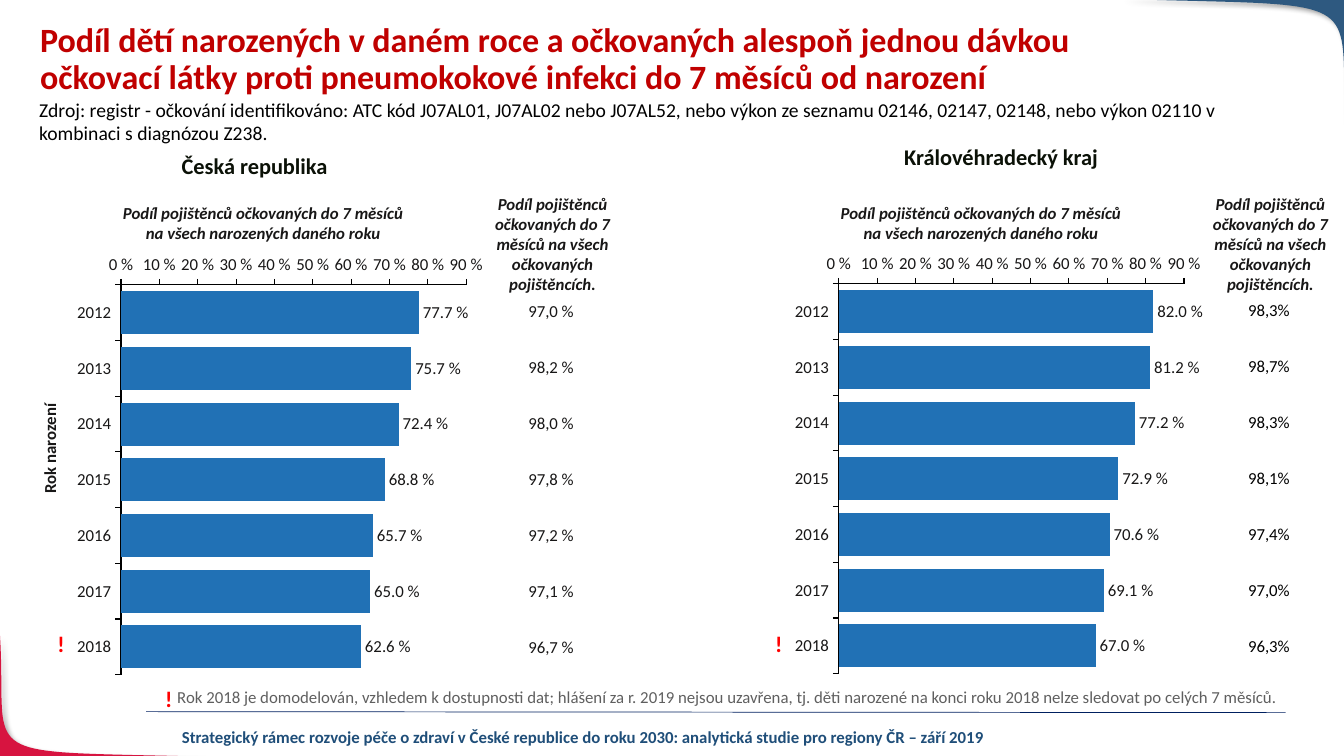
from dataclasses import dataclass

from lxml import etree
from pptx import Presentation
from pptx import oxml
from pptx import util as u
from pptx.chart.data import CategoryChartData
from pptx.dml.color import RGBColor
from pptx.enum import chart as ch, shapes, text
from pptx.oxml.ns import qn

Inches = u.Inches
A_NS = 'xmlns:a="http://schemas.openxmlformats.org/drawingml/2006/main"'
C_NS = 'xmlns:c="http://schemas.openxmlformats.org/drawingml/2006/chart"'
PLAIN_TABLE = "{2D5ABB26-0587-4C30-8999-92F81FD0307C}"


@dataclass(frozen=True)
class Theme:
    font: str = "Calibri"
    black: str = "000000"
    ink: str = "181717"
    heading: str = "0B1107"
    title: str = "C00000"
    alert: str = "FF0000"
    note: str = "5F5F5F"
    footer: str = "1F4E79"
    rule: str = "002060"
    bar: str = "2171B5"
    red_corner: str = "D71440"
    blue_corner: str = "2E5980"
    title_size: float = 24.3
    heading_size: float = 16
    source_size: float = 14
    body_size: float = 12


THEME = Theme()
YEARS = [str(year) for year in range(2012, 2019)]
CENTER = text.PP_ALIGN.CENTER


def rgb(code):
    return RGBColor.from_string(code)


def style(font, size=THEME.body_size, color=THEME.ink, bold=False, italic=False):
    font.name, font.size = THEME.font, u.Pt(size)
    font.bold, font.italic = bold, italic
    font.color.rgb = rgb(color)


def add_text(page, box, lines, align=None, spacing=None, **look):
    shape = page.shapes.add_textbox(*map(Inches, box))
    frame = shape.text_frame
    frame.word_wrap = True
    for index, line in enumerate(lines):
        para = frame.paragraphs[0] if index == 0 else frame.add_paragraph()
        para.alignment = align
        para.line_spacing = spacing
        span = para.add_run()
        span.text = line
        style(span.font, **look)
    return shape


def add_corner(page, start, handle_a, handle_b, end, corner, color):
    """Fill the area between a slide corner and a cubic curve."""
    steps = 40
    curve = []
    for step in range(1, steps + 1):
        t = step / steps
        weights = ((1 - t) ** 3, 3 * t * (1 - t) ** 2, 3 * t * t * (1 - t), t ** 3)
        points = (start, handle_a, handle_b, end)
        curve.append(tuple(sum(w * p[axis] for w, p in zip(weights, points))
                           for axis in (0, 1)))
    # Whole EMU coordinates keep the curve smooth
    outline = [(Inches(x), Inches(y)) for x, y in [start, *curve, corner]]
    builder = page.shapes.build_freeform(*outline[0])
    builder.add_line_segments(outline[1:], close=True)
    shape = builder.convert_to_shape()
    shape.fill.solid()
    shape.fill.fore_color.rgb = rgb(color)
    shape.line.fill.background()
    shape.shadow.inherit = False
    effects = shape._element.spPr.find(qn("a:effectLst"))
    effects.append(oxml.parse_xml(
        f'<a:outerShdw {A_NS} blurRad="{u.Pt(4)}" dist="{u.Pt(3)}" dir="2700000" '
        'algn="tl" rotWithShape="0"><a:srgbClr val="000000">'
        '<a:alpha val="40000"/></a:srgbClr></a:outerShdw>'))


def add_frame(page, width, height):
    # Corner ornaments
    add_corner(page, (2.13, height + 0.01), (-0.34, 7.44), (0.08, 7.59), (0, 6.3),
               (-0.01, height + 0.01), THEME.red_corner)
    add_corner(page, (11.11, -0.01), (13.7, 0.07), (13.26, -0.1), (width + 0.02, 1.42),
               (width + 0.02, -0.01), THEME.blue_corner)
    # Footer rule and text
    rule = page.shapes.add_connector(shapes.MSO_CONNECTOR.STRAIGHT, Inches(1.45),
                                     Inches(7.06), Inches(12.75), Inches(7.07))
    rule.line.color.rgb = rgb(THEME.rule)
    rule.line.width = u.Pt(0.5)
    etree.SubElement(rule._element.spPr, qn("a:effectLst"))
    add_text(page, (1.57, 7.16, 8.43, 0.3),
             ["Strategický rámec rozvoje péče o zdraví v České republice do roku 2030: "
              "analytická studie pro regiony ČR – září 2019"],
             CENTER, color=THEME.footer, bold=True)


def add_header(page):
    add_text(page, (0.29, 0.92, 12.14, 0.57),
             ["Zdroj: registr - očkování identifikováno: ATC kód J07AL01, J07AL02 nebo "
              "J07AL52, nebo výkon ze seznamu 02146, 02147, 02148, nebo výkon 02110 v "
              "kombinaci s diagnózou Z238."],
             size=THEME.source_size, color=THEME.black)
    add_text(page, (0.3, 0.18, 11.13, 0.69),
             ["Podíl dětí narozených v daném roce a očkovaných alespoň jednou dávkou "
              "očkovací látky proti pneumokokové infekci do 7 měsíců od narození"],
             spacing=0.9, size=THEME.title_size, color=THEME.title, bold=True)


def add_mark(page, left, top):
    add_text(page, (left, top, 0.4, 0.37), ["!"], size=THEME.heading_size,
             color=THEME.alert, bold=True)


def add_bars(page, box, percents):
    data = CategoryChartData()
    data.categories = YEARS
    data.add_series("Series 1", [round(value / 100, 3) for value in percents])
    chart = page.shapes.add_chart(ch.XL_CHART_TYPE.BAR_CLUSTERED,
                                  *map(Inches, box), data).chart
    style(chart.font)
    chart.has_legend = chart.has_title = False
    # Axes
    for axis in (chart.category_axis, chart.value_axis):
        axis.has_major_gridlines = False
        axis.major_tick_mark = ch.XL_TICK_MARK.OUTSIDE
        axis.minor_tick_mark = ch.XL_TICK_MARK.NONE
        axis.format.line.color.rgb = rgb(THEME.black)
        axis.format.line.width = u.Pt(0.75)
        style(axis.tick_labels.font)
    chart.category_axis.reverse_order = True
    scale = chart.value_axis
    scale.minimum_scale, scale.maximum_scale, scale.major_unit = 0, 0.9, 0.1
    scale.tick_labels.number_format = "0\\ %"
    scale.tick_labels.number_format_is_linked = False
    # Bars and labels
    plot = chart.plots[0]
    plot.gap_width, plot.overlap, plot.vary_by_categories = 30, 100, False
    fill = plot.series[0].format.fill
    fill.solid()
    fill.fore_color.rgb = rgb(THEME.bar)
    plot.has_data_labels = True
    labels = plot.data_labels
    labels.show_value = True
    labels.number_format, labels.number_format_is_linked = "0.0\\ %", False
    labels.position = ch.XL_LABEL_POSITION.OUTSIDE_END
    style(labels.font)
    # Fixed inner plot area
    area = chart._chartSpace.chart.plotArea
    for layout in area.findall(qn("c:layout")):
        area.remove(layout)
    sizes = "".join(f'<c:{key} val="{value}"/>' for key, value in
                    (("x", 0.2), ("y", 0.09), ("w", 0.678), ("h", 0.875)))
    area.insert(0, oxml.parse_xml(
        f'<c:layout {C_NS}><c:manualLayout><c:layoutTarget val="inner"/>'
        f'<c:xMode val="edge"/><c:yMode val="edge"/>{sizes}'
        '</c:manualLayout></c:layout>'))


def add_shares(page, box, shares, color):
    table = page.shapes.add_table(len(shares), 1, *map(Inches, box)).table
    table.first_row = table.horz_banding = False
    # Plain style without cell borders
    table._tbl.tblPr.find(qn("a:tableStyleId")).text = PLAIN_TABLE
    for row, share in enumerate(shares):
        cell = table.cell(row, 0)
        cell.fill.background()
        cell.vertical_anchor = text.MSO_ANCHOR.MIDDLE
        cell.margin_left = cell.margin_right = cell.margin_top = Inches(0.01)
        cell.margin_bottom = 0
        para = cell.text_frame.paragraphs[0]
        para.alignment = CENTER
        span = para.add_run()
        span.text = share
        style(span.font, color=color)


def add_panel(page, left, top, heading, heading_box, percents, shares, share_color):
    add_text(page, heading_box, [heading], CENTER, size=THEME.heading_size,
             color=THEME.heading, bold=True)
    add_bars(page, (left, top, 5.05, 4.42), percents)
    add_shares(page, (left + 4.95, top + 0.38, 0.65, 3.89), shares, share_color)
    # Column headings lie in front of the chart and the table
    add_text(page, (left + 0.65, 1.96, 3.54, 0.5),
             ["Podíl pojištěnců očkovaných do 7 měsíců",
              "na všech narozených daného roku"], CENTER, bold=True, italic=True)
    add_text(page, (left + 4.58, 1.87, 1.42, 1.11),
             ["Podíl pojištěnců očkovaných do 7 měsíců na všech očkovaných "
              "pojištěncích."], CENTER, bold=True, italic=True)
    add_mark(page, left + 0.28, 6.2)


def add_notes_line(page):
    add_text(page, (1.66, 6.76, 11.37, 0.3),
             ["Rok 2018 je domodelován, vzhledem k dostupnosti dat; hlášení za r. 2019 "
              "nejsou uzavřena, tj. děti narozené na konci roku 2018 nelze sledovat po "
              "celých 7 měsíců."], color=THEME.note)
    add_mark(page, 1.54, 6.75)


def main():
    deck = Presentation()
    deck.slide_width, deck.slide_height = Inches(13.33), Inches(7.5)
    page = deck.slides.add_slide(deck.slide_layouts[6])
    add_frame(page, 13.33, 7.5)
    add_header(page)
    add_panel(page, 0.19, 2.43, "Česká republika", (0.2, 1.46, 4.65, 0.37),
              [77.7, 75.7, 72.4, 68.8, 65.7, 65.0, 62.6],
              ["97,0 %", "98,2 %", "98,0 %", "97,8 %", "97,2 %", "97,1 %", "96,7 %"],
              THEME.ink)
    add_panel(page, 7.31, 2.42, "Královéhradecký kraj", (7.95, 1.37, 3.96, 0.37),
              [82.0, 81.2, 77.2, 72.9, 70.6, 69.1, 67.0],
              ["98,3%", "98,7%", "98,3%", "98,1%", "97,4%", "97,0%", "96,3%"],
              THEME.black)
    axis_title = add_text(page, (-0.88, 4.3, 2.74, 0.3), ["Rok narození"], CENTER,
                          bold=True)
    axis_title.rotation = 270
    add_notes_line(page)
    deck.save("out.pptx")


if __name__ == "__main__":
    main()
